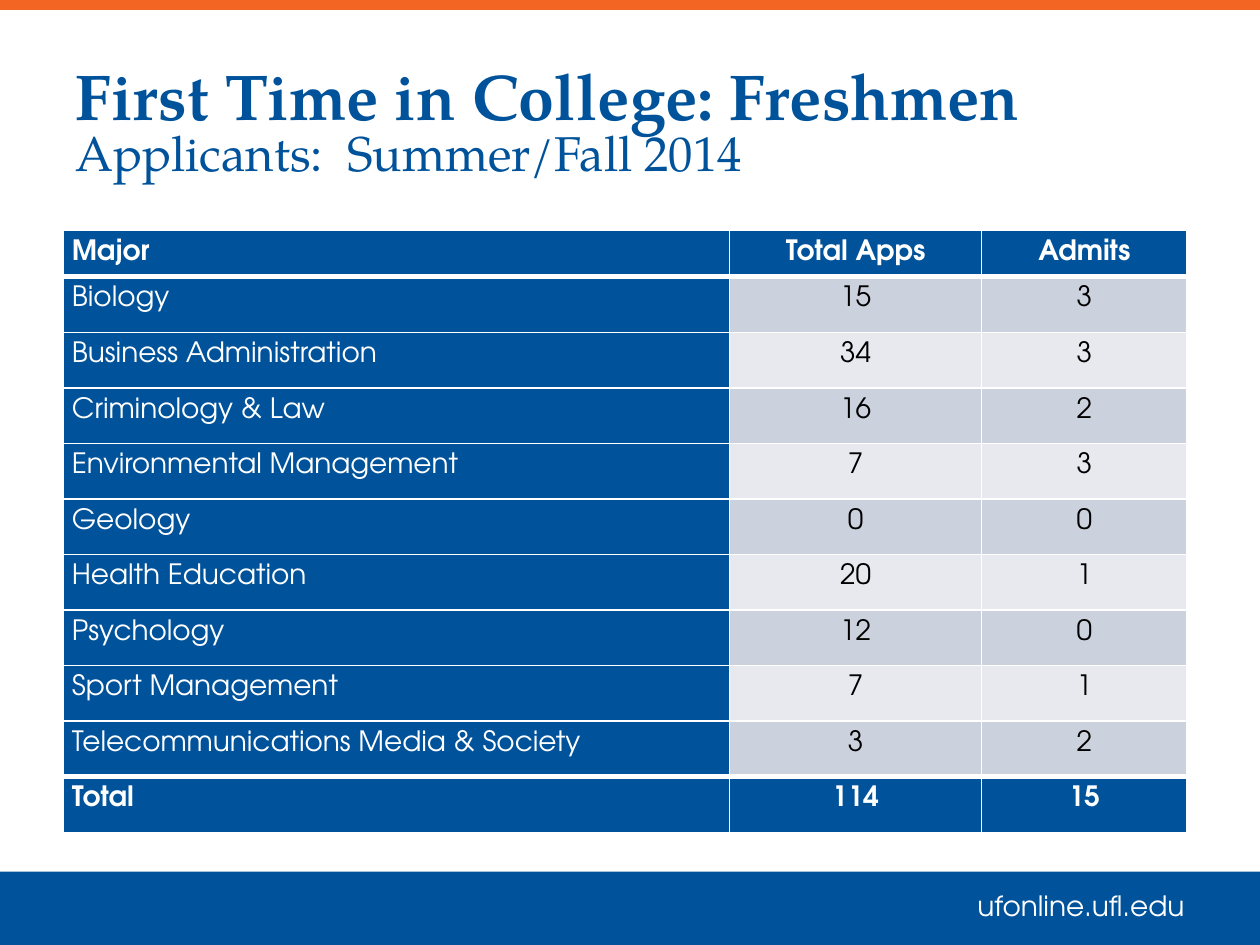
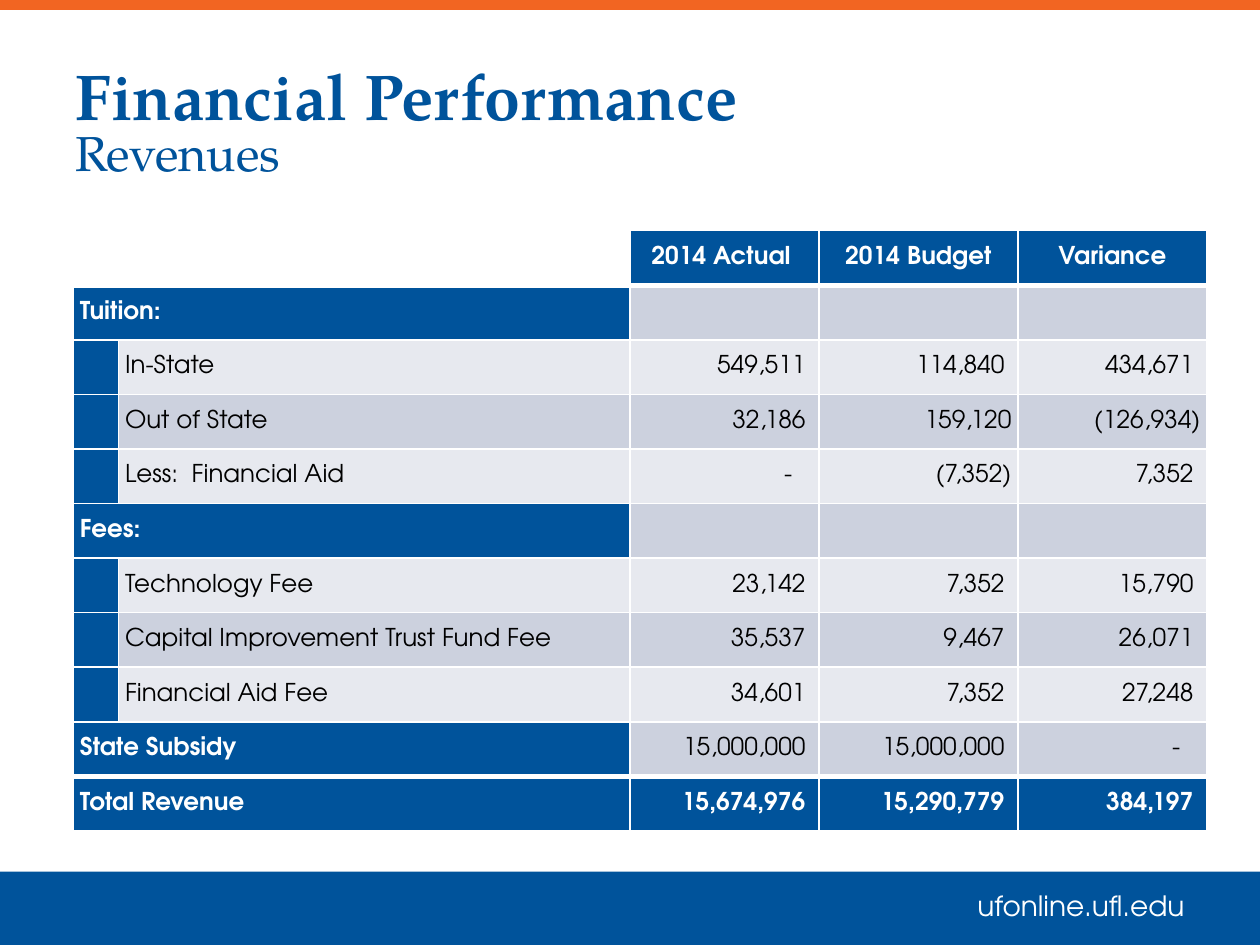
import pptx
import pptx.dml.color
import pptx.enum.shapes
import pptx.enum.text
import pptx.oxml
import pptx.oxml.ns
import pptx.util

Cm, Pt = pptx.util.Cm, pptx.util.Pt
ALIGN, ANCHOR = pptx.enum.text.PP_ALIGN, pptx.enum.text.MSO_ANCHOR

BLUE, ORANGE, WHITE, BLACK = "00539B", "F26522", "FFFFFF", "000000"
BANDS = ["E7E9EF", "CCD1DE"]  # even rows, odd rows
BODY_FONT, TITLE_FONT = "TeX Gyre Adventor", "TeX Gyre Pagella"


def color(hex_string):
    return pptx.dml.color.RGBColor.from_string(hex_string)


def set_borders(cell, top, bottom):
    """Draw white cell borders; top and bottom are widths in points."""
    properties = cell._tc.get_or_add_tcPr()
    for index, (side, width) in enumerate([("L", 1), ("R", 1), ("T", top), ("B", bottom)]):
        line = pptx.oxml.parse_xml(
            f'<a:ln{side} {pptx.oxml.ns.nsdecls("a")} w="{Pt(width)}">'
            f'<a:solidFill><a:srgbClr val="{WHITE}"/></a:solidFill></a:ln{side}>')
        properties.insert(index, line)


applicants = {
    "title": ["First Time in College: Freshmen", "Applicants:  Summer/Fall 2014"],
    "left": 1.27, "columns": [13.44, 5.08, 4.14], "row_heights": [0.89] + [1.12] * 10,
    "size": 16, "line_spacing": 1.37, "anchor": ANCHOR.TOP, "insets": (0.18, 0),
    "label_columns": 1, "bold_labels": False, "number_align": ALIGN.CENTER,
    "rows": [
        ["Major", "Total Apps", "Admits"],
        ["Biology", "15", "3"],
        ["Business Administration", "34", "3"],
        ["Criminology & Law", "16", "2"],
        ["Environmental Management", "7", "3"],
        ["Geology", "0", "0"],
        ["Health Education", "20", "1"],
        ["Psychology", "12", "0"],
        ["Sport Management", "7", "1"],
        ["Telecommunications Media & Society", "3", "2"],
        ["Total", "114", "15"],
    ],
}
revenues = {
    "title": ["Financial Performance", "Revenues"],
    "left": 1.48, "columns": [0.91, 10.31, 3.81, 4.01, 3.81], "row_heights": [1.1] * 11,
    "size": 14, "line_spacing": 1.0, "anchor": ANCHOR.MIDDLE, "insets": (0.13, 0.13),
    "label_columns": 2, "bold_labels": True, "number_align": ALIGN.RIGHT,
    "rows": [
        ["", "", "2014 Actual ", "2014 Budget", "Variance"],
        ["Tuition:", "", "", "", ""],
        ["", "In-State", "549,511", "114,840", "434,671"],
        ["", "Out of State", "32,186", "159,120", "(126,934)"],
        ["", "Less:  Financial Aid", "-", "(7,352)", "7,352"],
        ["Fees:", "", "", "", ""],
        ["", "Technology Fee", "23,142", "7,352", "15,790"],
        ["", "Capital Improvement Trust Fund Fee", "35,537", "9,467", "26,071"],
        ["", "Financial Aid Fee", "34,601", "7,352", "27,248"],
        ["State Subsidy", "", "15,000,000", "15,000,000", "-"],
        ["Total Revenue", "", "15,674,976", "15,290,779", "384,197"],
    ],
}
# Right insets of accounting figures; other figures leave room for a bracket
FIGURE_INSETS = {"-": 0.54, "159,120": 0.13, "(126,934)": 0.13, "(7,352)": 0.13}

presentation = pptx.Presentation()
presentation.slide_width, presentation.slide_height = Cm(25.4), Cm(19.05)

for content in [applicants, revenues]:
    slide = presentation.slides.add_slide(presentation.slide_layouts[6])

    for top, height, fill in [(0, 0.2, ORANGE), (17.57, 1.48, BLUE)]:
        band = slide.shapes.add_shape(pptx.enum.shapes.MSO_SHAPE.RECTANGLE,
                                      0, Cm(top), presentation.slide_width, Cm(height))
        band.shadow.inherit = False
        band.fill.solid()
        band.fill.fore_color.rgb = color(fill)
        band.line.fill.background()

    footer = slide.shapes.add_textbox(Cm(19.05), Cm(17.78), Cm(5.08), Cm(0.94))
    footer.text_frame.word_wrap = True
    footer.text_frame.text = "ufonline.ufl.edu"
    paragraph = footer.text_frame.paragraphs[0]
    paragraph.alignment = ALIGN.RIGHT
    paragraph.font.name, paragraph.font.size = BODY_FONT, Pt(16)
    paragraph.font.color.rgb = color(WHITE)

    title = slide.shapes.add_textbox(Cm(1.27), Cm(0.84), Cm(22.86), Cm(3.1))
    title.text_frame.word_wrap = True
    title.text_frame.vertical_anchor = ANCHOR.MIDDLE
    title.text_frame.text = "\n".join(content["title"])
    title_styles = [(36.9, True, 1.0), (27.9, False, 0.8)]
    for paragraph, (size, bold, spacing) in zip(title.text_frame.paragraphs, title_styles):
        paragraph.line_spacing = spacing
        paragraph.font.name, paragraph.font.size = TITLE_FONT, Pt(size)
        paragraph.font.bold = bold
        paragraph.font.color.rgb = color(BLUE)

    rows, columns, heights = content["rows"], content["columns"], content["row_heights"]
    label_columns, last_row = content["label_columns"], len(rows) - 1
    table = slide.shapes.add_table(len(rows), len(columns), Cm(content["left"]), Cm(4.65),
                                   Cm(sum(columns)), Cm(sum(heights))).table
    for column, width in zip(table.columns, columns):
        column.width = Cm(width)
    for row, height in zip(table.rows, heights):
        row.height = Cm(height)

    for row_index, row in enumerate(rows):
        is_header, is_total = row_index == 0, row_index == last_row
        for column_index, text in enumerate(row):
            cell = table.cell(row_index, column_index)
            is_label = column_index < label_columns
            is_blue = is_header or is_total or column_index == 0
            if is_header and is_label and not text:
                cell.fill.background()
            else:
                cell.fill.solid()
                cell.fill.fore_color.rgb = color(BLUE if is_blue else BANDS[row_index % 2])
            set_borders(cell, top=3 if row_index in (1, last_row) else 1,
                        bottom=3 if row_index in (0, last_row - 1) else 1)

            side, vertical = content["insets"]
            cell.margin_left = cell.margin_right = Cm(side)
            cell.margin_top = cell.margin_bottom = Cm(vertical)
            cell.vertical_anchor = content["anchor"]
            cell.text_frame.text = text
            paragraph = cell.text_frame.paragraphs[0]
            paragraph.line_spacing = content["line_spacing"]
            if is_label:
                paragraph.alignment = ALIGN.LEFT
            elif is_header:
                paragraph.alignment = ALIGN.CENTER
            else:
                paragraph.alignment = content["number_align"]
                if paragraph.alignment == ALIGN.RIGHT:
                    cell.margin_right = Cm(FIGURE_INSETS.get(text, 0.27))
            paragraph.font.name, paragraph.font.size = BODY_FONT, Pt(content["size"])
            paragraph.font.bold = is_header or is_total or (is_blue and content["bold_labels"])
            paragraph.font.color.rgb = color(WHITE if is_blue else BLACK)
        if label_columns == 2 and row[0]:
            table.cell(row_index, 0).merge(table.cell(row_index, 1))

presentation.save("out.pptx")
